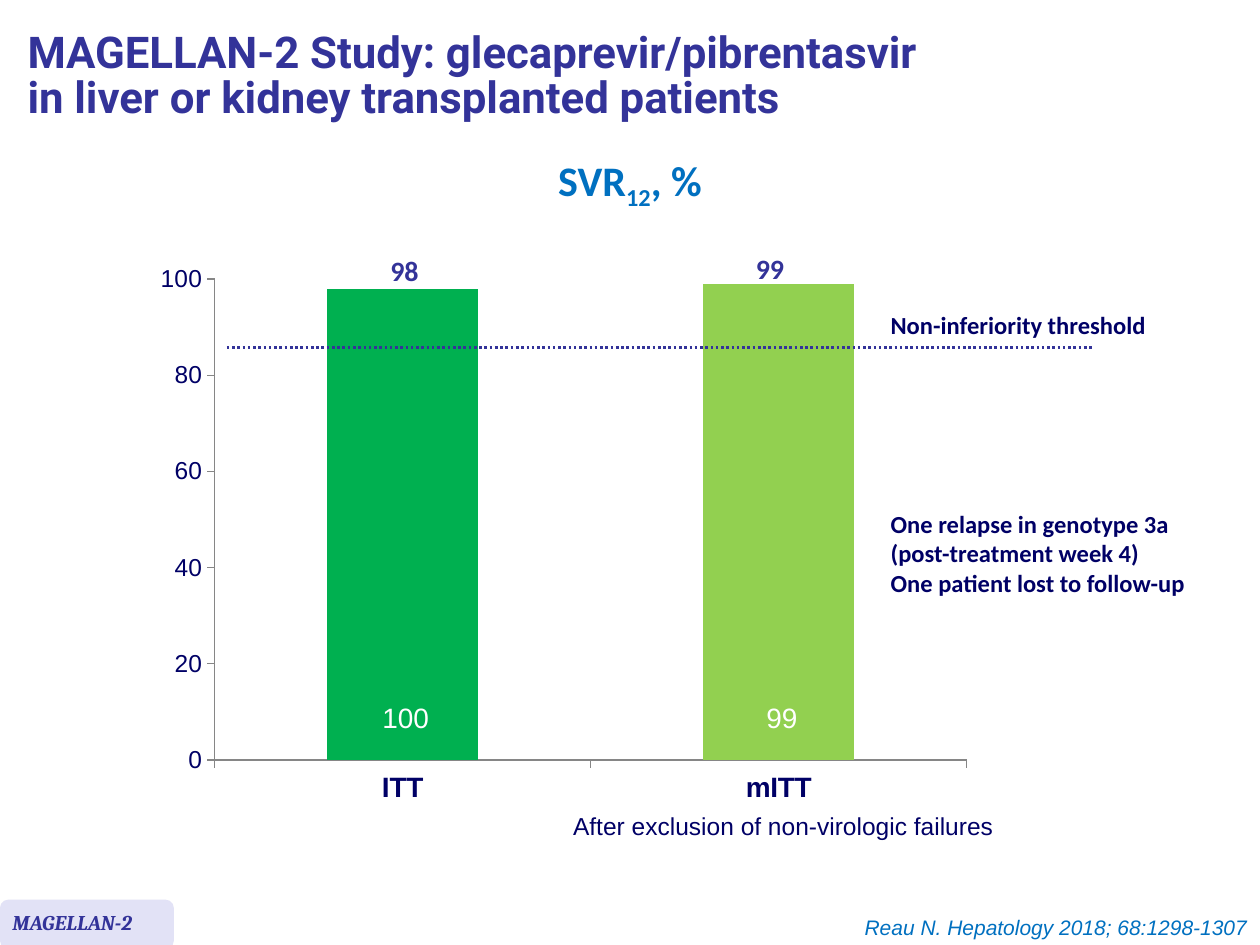
from lxml.etree import SubElement
from pptx import Presentation
from pptx.chart.data import CategoryChartData
from pptx.dml.color import RGBColor
from pptx.enum.chart import XL_CHART_TYPE, XL_TICK_MARK
from pptx.enum.dml import MSO_LINE
from pptx.enum.shapes import MSO_CONNECTOR, MSO_SHAPE
from pptx.enum.text import MSO_ANCHOR, PP_ALIGN
from pptx.oxml import parse_xml
from pptx.oxml.ns import nsdecls, qn
from pptx.util import Inches, Pt

INDIGO = RGBColor(0x33, 0x33, 0x99)
NAVY = RGBColor(0x00, 0x00, 0x66)
BLUE = RGBColor(0x00, 0x70, 0xC0)
WHITE = RGBColor(0xFF, 0xFF, 0xFF)
LAVENDER = RGBColor(0xE2, 0xE2, 0xF6)
GREEN = RGBColor(0x00, 0xB0, 0x50)
LIME = RGBColor(0x92, 0xD0, 0x50)
GREY = RGBColor(0x86, 0x86, 0x86)


def style(name, size, color, bold=False, italic=False):
    return {"name": name, "size": Pt(size), "bold": bold, "italic": italic, "color": color}


TITLE = style("Roboto", 25, INDIGO, bold=True)
HEADING = style("Calibri", 24, BLUE, bold=True)
NOTE = style("Calibri", 14, NAVY, bold=True)
RATE = style("Calibri", 16, INDIGO, bold=True)
COUNT = style("Arial", 16, WHITE)
CAPTION = style("Arial", 14, NAVY)
CATEGORY = style("Arial", 16, NAVY, bold=True)
TAG = style("Cambria", 12, INDIGO, bold=True, italic=True)
SOURCE = style("Arial", 12, BLUE, italic=True)

LEFT, CENTER, RIGHT = PP_ALIGN.LEFT, PP_ALIGN.CENTER, PP_ALIGN.RIGHT

# Boxes are left, top, width, height in percent of the slide
TAG_BOX = (0, 95.2, 13.8, 5.2)
CHART_BOX = (11.5, 26.93, 66.7, 59.2)
THRESHOLD = (18, 36.8, 68.8, 0)
NOTES_LEFT = 69.7

RATES = {"ITT": (98, GREEN), "mITT": (99, LIME)}
PLOT_LAYOUT = {"x": 0.083, "y": 0.044, "w": 0.895, "h": 0.86}  # shares of the chart

# Box, alignment, wrap, style, paragraphs
TEXTS = [
    ((0, 95.6, 13.8, 4), LEFT, True, TAG, ["MAGELLAN-2"]),
    ((26.4, 96.13, 73.6, 4), RIGHT, True, SOURCE, ["Reau N. Hepatology 2018; 68:1298-1307"]),
    ((59.8, 73.47, 4.5, 4.93), CENTER, False, COUNT, ["99"]),
    ((29.3, 73.47, 5.8, 4.93), CENTER, False, COUNT, ["100"]),
    ((NOTES_LEFT, 32.13, 22.4, 4.53), LEFT, False, NOTE, ["Non-inferiority threshold"]),
    ((44.5, 85.2, 35.5, 4.53), LEFT, False, CAPTION, ["After exclusion of non-virologic failures"]),
    ((NOTES_LEFT, 53.2, 25.5, 10.8), LEFT, False, NOTE,
     ["One relapse in genotype 3a", "(post-treatment week 4)", "One patient lost to follow-up"]),
    ((30, 26.13, 4.3, 4.93), LEFT, False, RATE, ["98"]),
    ((59, 26, 4.3, 4.93), LEFT, False, RATE, ["99"]),
]

prs = Presentation()
prs.slide_width, prs.slide_height = Inches(10), Inches(7.5)
slide = prs.slides.add_slide(prs.slide_layouts[6])
shapes = slide.shapes


def place(box):
    sides = (prs.slide_width, prs.slide_height) * 2
    return [int(side * share / 100) for side, share in zip(sides, box)]


def apply_style(font, look):
    for key, value in look.items():
        if key == "color":
            font.color.rgb = value
        else:
            setattr(font, key, value)


def add_run(paragraph, text, look):
    run = paragraph.add_run()
    run.text = text
    apply_style(run.font, look)
    return run


def add_text(box, align, wrap, look, lines):
    frame = shapes.add_textbox(*place(box)).text_frame
    frame.word_wrap = wrap
    for index, line in enumerate(lines):
        paragraph = frame.add_paragraph() if index else frame.paragraphs[0]
        paragraph.alignment = align
        if line:
            add_run(paragraph, line, look)
    return frame


# Study tag background
tag = shapes.add_shape(MSO_SHAPE.ROUNDED_RECTANGLE, *place(TAG_BOX))
tag.shadow.inherit = False
tag.fill.solid()
tag.fill.fore_color.rgb = LAVENDER
tag.line.fill.background()

# Title on two lines
title = add_text((1.2, 1.07, 98.8, 14.27), LEFT, True, TITLE, [""])
title.vertical_anchor = MSO_ANCHOR.MIDDLE
headline = title.paragraphs[0]
headline.line_spacing = 0.85
add_run(headline, "MAGELLAN-2 Study: glecaprevir/pibrentasvir", TITLE)
headline.add_line_break()
add_run(headline, "in liver or kidney transplanted patients", TITLE)

# Chart heading with a subscript
heading = add_text((1.2, 18.93, 97.6, 4.67), CENTER, True, HEADING, ["SVR"]).paragraphs[0]
heading.line_spacing = Pt(15.2)
week = add_run(heading, "12", HEADING)
week.font._element.set("baseline", "-25000")
add_run(heading, ", %", HEADING)

# Response rate chart
data = CategoryChartData()
data.categories = list(RATES)
data.add_series("Series 1", [rate for rate, _ in RATES.values()])
chart = shapes.add_chart(XL_CHART_TYPE.COLUMN_CLUSTERED, *place(CHART_BOX), data).chart
chart.has_legend = chart.has_title = False
apply_style(chart.font, CAPTION)

plot = chart.plots[0]
plot.gap_width = 150
plot.vary_by_categories = False
bars = plot.series[0]
bars.format.fill.solid()
bars.format.fill.fore_color.rgb = LIME
for index, (_, color) in enumerate(RATES.values()):
    fill = bars.points[index].format.fill
    fill.solid()
    fill.fore_color.rgb = color

for axis, look in ((chart.category_axis, CATEGORY), (chart.value_axis, CAPTION)):
    axis.has_major_gridlines = False
    axis.major_tick_mark = XL_TICK_MARK.OUTSIDE
    axis.format.line.color.rgb = GREY
    axis.format.line.width = Pt(0.75)
    apply_style(axis.tick_labels.font, look)
for key, value in {"minimum_scale": 0, "maximum_scale": 100, "major_unit": 20}.items():
    setattr(chart.value_axis, key, value)

# Fixed inner plot area
plot_area = chart._chartSpace.find(".//" + qn("c:plotArea"))
for old_layout in plot_area.findall(qn("c:layout")):
    plot_area.remove(old_layout)
settings = {"layoutTarget": "inner", "xMode": "edge", "yMode": "edge", **PLOT_LAYOUT}
items = "".join(f'<c:{key} val="{value}"/>' for key, value in settings.items())
plot_area.insert(0, parse_xml(
    f'<c:layout {nsdecls("c")}><c:manualLayout>{items}</c:manualLayout></c:layout>'))

# Non-inferiority line
left, top, width, height = place(THRESHOLD)
threshold = shapes.add_connector(MSO_CONNECTOR.STRAIGHT, left, top, left + width, top + height)
threshold.line.color.rgb = INDIGO
threshold.line.width = Pt(1.5)
threshold.line.dash_style = MSO_LINE.ROUND_DOT
SubElement(threshold._element.spPr, qn("a:effectLst"))

# Labels, notes and source
for text in TEXTS:
    add_text(*text)

prs.save("out.pptx")
